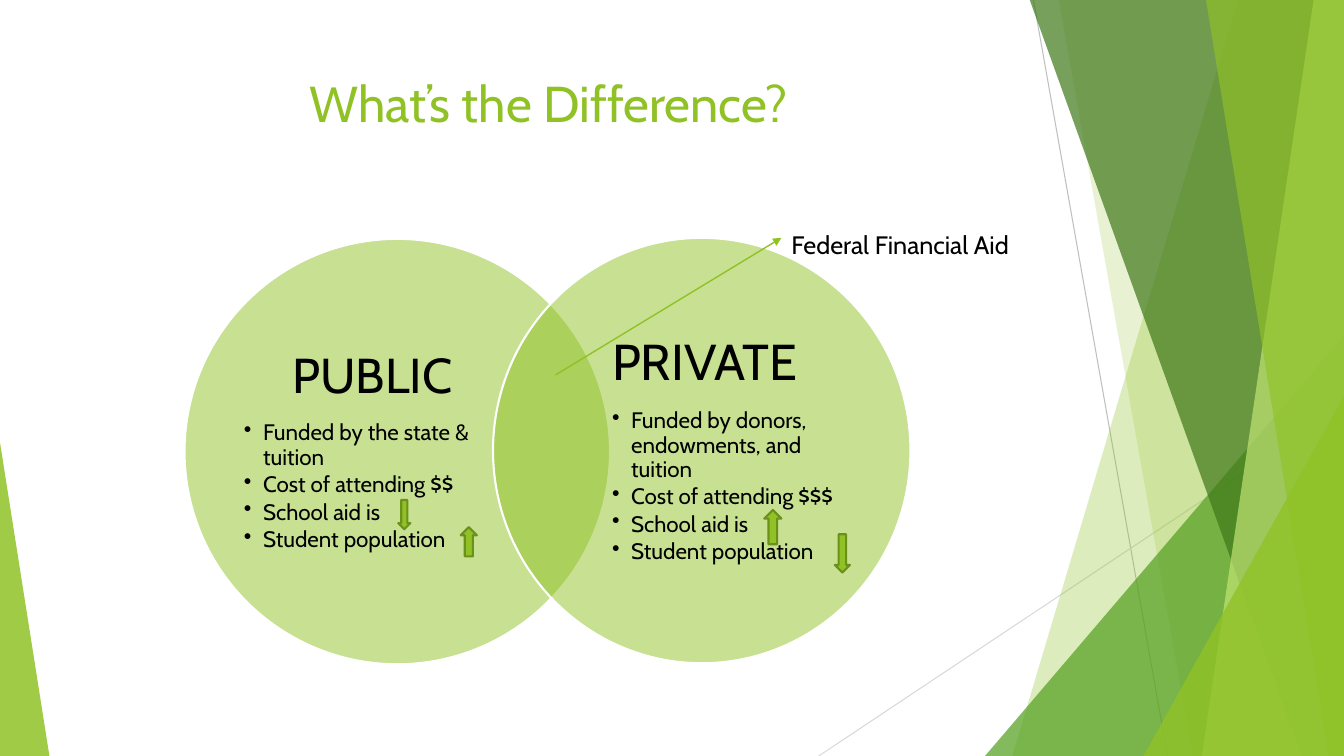
from dataclasses import dataclass

from lxml.etree import SubElement
from pptx import Presentation
from pptx.dml.color import RGBColor
from pptx.enum.shapes import MSO_CONNECTOR as Connector, MSO_SHAPE as Preset
from pptx.enum.text import MSO_ANCHOR as Anchor, PP_ALIGN as Align
from pptx.oxml.ns import qn
from pptx.util import Inches, Pt

WIDTH, HEIGHT = 13.33, 7.5


@dataclass(frozen=True)
class Theme:
    font: str = "Cabin"
    lime: str = "90C226"
    green: str = "54A021"
    forest: str = "3F7819"
    pale: str = "C0E474"
    outline: str = "6B901C"
    gray: str = "BFBFBF"
    light_gray: str = "D9D9D9"
    white: str = "FFFFFF"
    black: str = "000000"
    title_size: int = 36
    label_size: int = 18
    list_size: int = 16


class SlideBuilder:
    """Draws styled elements on one slide."""

    def __init__(self, slide, theme):
        self.slide = slide
        self.shapes = slide.shapes
        self.theme = theme

    def paint(self, shape, color, alpha=100, line=None):
        shape.shadow.inherit = False
        shape.fill.solid()
        shape.fill.fore_color.rgb = RGBColor.from_string(color)
        if alpha < 100:
            solid = shape.fill._xPr.find(qn("a:solidFill"))
            SubElement(solid[0], qn("a:alpha"), val=str(alpha * 1000))
        if line:
            shape.line.color.rgb = RGBColor.from_string(line)
            shape.line.width = Pt(1.5)
        else:
            shape.line.fill.background()

    def preset(self, kind, box, color, alpha=100, line=None, apex=None):
        shape = self.shapes.add_shape(kind, *map(Inches, box))
        if apex is not None:
            shape.adjustments[0] = apex
        self.paint(shape, color, alpha, line)

    def corner(self, left, top, width, color, alpha, apex):
        box = left, top, width, HEIGHT - top
        self.preset(Preset.ISOSCELES_TRIANGLE, box, color, alpha, apex=apex)

    def band(self, top_x, bottom_x, color, alpha):
        top = Inches(-0.01)
        right, bottom = Inches(WIDTH), Inches(HEIGHT)
        builder = self.shapes.build_freeform(Inches(top_x), top, scale=1.0)
        builder.add_line_segments(
            [(right, top), (right, bottom), (Inches(bottom_x), bottom)])
        self.paint(builder.convert_to_shape(), color, alpha)

    def line(self, start, end, color, width, arrow=False):
        connector = self.shapes.add_connector(
            Connector.STRAIGHT, *map(Inches, (*start, *end)))
        connector.line.color.rgb = RGBColor.from_string(color)
        connector.line.width = Pt(width)
        if arrow:
            SubElement(connector.line._get_or_add_ln(), qn("a:tailEnd"), type="triangle")
        SubElement(connector._element.spPr, qn("a:effectLst"))

    def format(self, paragraph, size, color):
        for run in paragraph.runs:
            run.font.name = self.theme.font
            run.font.size = Pt(size)
            run.font.color.rgb = RGBColor.from_string(color)

    def text(self, box, text, size, color, align=Align.LEFT):
        text_frame = self.shapes.add_textbox(*map(Inches, box)).text_frame
        text_frame.word_wrap = True
        text_frame.text = text
        text_frame.paragraphs[0].alignment = align
        self.format(text_frame.paragraphs[0], size, color)
        return text_frame

    def indent(self, paragraph, margin, first=0.0):
        properties = paragraph._p.get_or_add_pPr()
        properties.set("marL", str(Inches(margin)))
        properties.set("indent", str(Inches(first)))
        return properties

    def heading_list(self, box, heading, size, offset, items):
        text_frame = self.text(box, heading, size, self.theme.black)
        text_frame.vertical_anchor = Anchor.MIDDLE
        text_frame.margin_left = text_frame.margin_right = 0
        text_frame.margin_top = text_frame.margin_bottom = 0
        title = text_frame.paragraphs[0]
        title.line_spacing = 0.9
        title.space_after = Pt(0.35 * size)
        self.indent(title, offset)
        for item in items:
            paragraph = text_frame.add_paragraph()
            paragraph.text = item
            paragraph.level = 1
            paragraph.line_spacing = 0.9
            paragraph.space_after = Pt(0.15 * self.theme.list_size)
            properties = self.indent(paragraph, 0.19, -0.19)
            SubElement(properties, qn("a:buChar"), char="•")
            self.format(paragraph, self.theme.list_size, self.theme.black)


def main():
    presentation = Presentation()
    presentation.slide_width = Inches(WIDTH)
    presentation.slide_height = Inches(HEIGHT)
    slide = presentation.slides.add_slide(presentation.slide_layouts[6])
    theme = Theme()
    builder = SlideBuilder(slide, theme)

    builder.line((10.25, 0), (11.58, HEIGHT), theme.gray, 0.75)
    builder.line((WIDTH, 4.03), (8.12, HEIGHT), theme.light_gray, 0.75)
    builder.band(12.28, 10.04, theme.lime, 30)
    builder.band(10.5, 11.83, theme.lime, 20)
    builder.corner(9.77, 3.33, 3.56, theme.green, 72, apex=1)
    builder.band(10.21, 12.91, theme.forest, 70)
    builder.band(13.03, 11.92, theme.pale, 70)
    builder.band(11.96, 13.18, theme.lime, 65)
    builder.corner(11.34, 3.93, 1.99, theme.lime, 80, apex=1)
    builder.corner(0, 4.39, 0.49, theme.lime, 85, apex=0)

    builder.text((0.74, 0.67, 9.4, 1.44), "What’s the Difference?",
                 theme.title_size, theme.lime, Align.CENTER)

    shared_items = ["School aid is", "Student population"]
    circles = [
        ((1.83, 2.37, 4.22, 4.22), (2.42, 2.87, 2.43, 3.23), "PUBLIC", 35, 0.48,
         ["Funded by the state & tuition", "Cost of attending $$"]),
        ((4.89, 2.36, 4.14, 4.22), (6.07, 2.86, 2.39, 3.23), "PRIVATE", 36, 0,
         ["Funded by donors, endowments, and tuition", "Cost of attending $$$"]),
    ]
    for circle, box, heading, size, offset, items in circles:
        builder.preset(Preset.OVAL, circle, theme.lime, 50, theme.white)
        builder.heading_list(box, heading, size, offset, items + shared_items)

    for kind, box in [
        (Preset.DOWN_ARROW, (3.95, 4.96, 0.12, 0.29)),
        (Preset.UP_ARROW, (4.57, 5.23, 0.16, 0.29)),
        (Preset.UP_ARROW, (7.58, 5.06, 0.17, 0.34)),
        (Preset.DOWN_ARROW, (8.28, 5.3, 0.15, 0.38)),
    ]:
        builder.preset(kind, box, theme.lime, line=theme.outline)

    builder.line((5.51, 3.72), (7.75, 2.36), theme.lime, 1, arrow=True)
    builder.text((7.75, 2.23, 3.75, 0.4), "Federal Financial Aid",
                 theme.label_size, theme.black)

    presentation.save("out.pptx")


if __name__ == "__main__":
    main()
